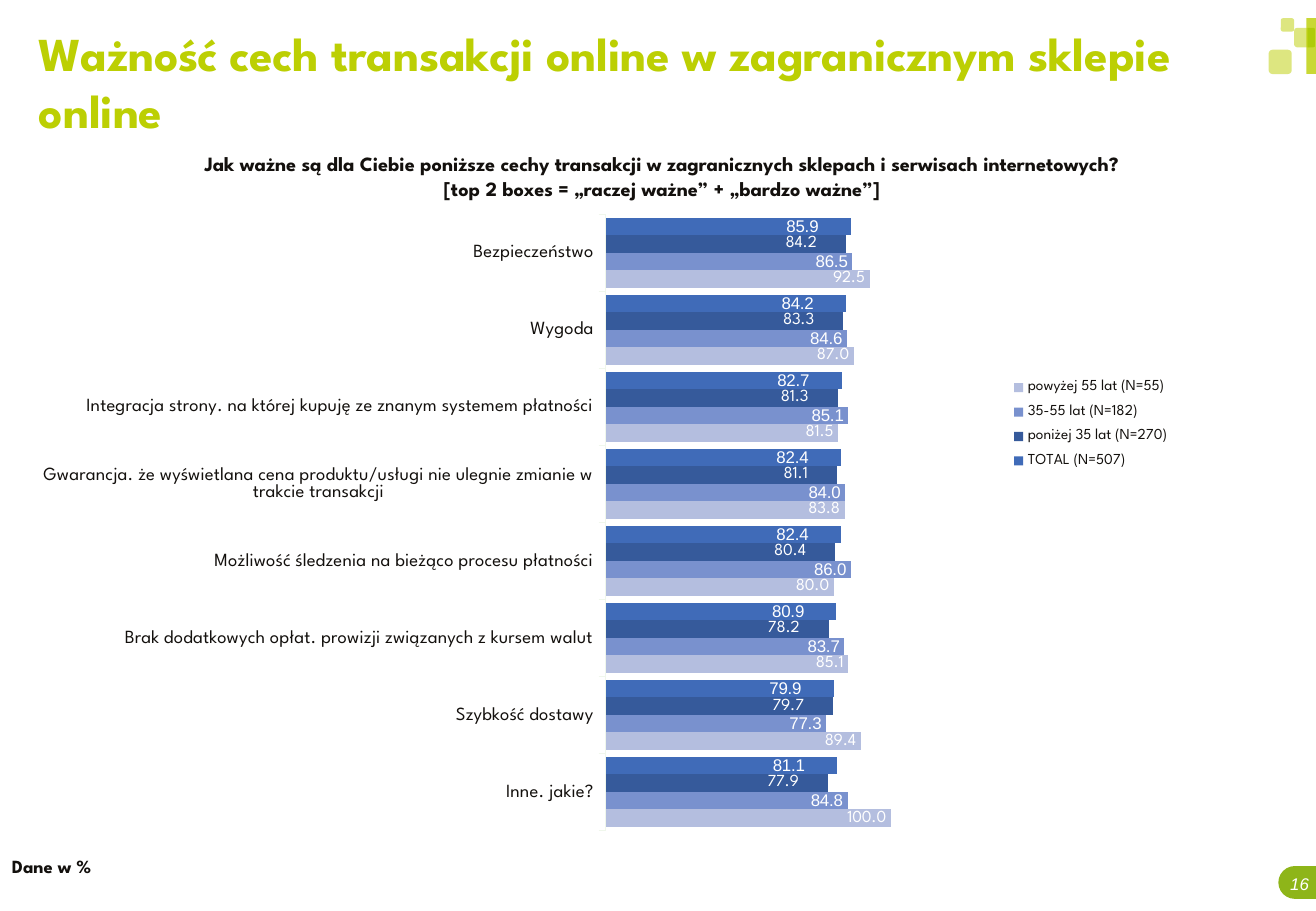
from lxml import etree
from pptx import Presentation
from pptx.chart.data import CategoryChartData
from pptx.dml.color import RGBColor
from pptx.enum.chart import XL_CHART_TYPE, XL_LABEL_POSITION, XL_LEGEND_POSITION, XL_TICK_MARK
from pptx.enum.shapes import MSO_SHAPE
from pptx.enum.text import MSO_ANCHOR, PP_ALIGN
from pptx.oxml import parse_xml
from pptx.oxml.ns import nsdecls, qn
from pptx.util import Pt

PX = 9144  # 100 px to the inch
WHITE = RGBColor(0xFF, 0xFF, 0xFF)
INK = RGBColor(0x13, 0x10, 0x0D)
LIME = RGBColor(0xBC, 0xCF, 0x03)
GREEN = RGBColor(0x7C, 0xBB, 0x26)
BADGE_GREEN = RGBColor(0x8E, 0xB5, 0x19)
AXIS_LINE = RGBColor(0xF0, 0xF7, 0xEC)
SPARTAN, ARIAL = "League Spartan", "Arial"

ACCOUNTING = r"_-* #\ ##0.0\ _z_ł_-;\-* #\ ##0.0\ _z_ł_"
FEATURES = [
    "Bezpieczeństwo",
    "Wygoda",
    "Integracja strony. na której kupuję ze znanym systemem płatności",
    "Gwarancja. że wyświetlana cena produktu/usługi nie ulegnie zmianie w trakcie transakcji",
    "Możliwość śledzenia na bieżąco procesu płatności",
    "Brak dodatkowych opłat. prowizji związanych z kursem walut",
    "Szybkość dostawy",
    "Inne. jakie?",
]
# name, values, bar colour, label font, label number format
AGE_GROUPS = [
    ("TOTAL (N=507)", (85.9, 84.2, 82.7, 82.4, 82.4, 80.9, 79.9, 81.1),
     RGBColor(0x40, 0x6B, 0xB8), ARIAL, ACCOUNTING),
    ("poniżej 35 lat (N=270)", (84.2, 83.3, 81.3, 81.1, 80.4, 78.2, 79.7, 77.9),
     RGBColor(0x36, 0x5A, 0x9B), SPARTAN, ACCOUNTING),
    ("35-55 lat (N=182)", (86.5, 84.6, 85.1, 84.0, 86.0, 83.7, 77.3, 84.8),
     RGBColor(0x79, 0x91, 0xCE), ARIAL, "0.0"),
    ("powyżej 55 lat (N=55)", (92.5, 87.0, 81.5, 83.8, 80.0, 85.1, 89.4, 100.0),
     RGBColor(0xB4, 0xBE, 0xDF), SPARTAN, "0.0"),
]


def scaled(box):
    return [length * PX for length in box]


def set_font(font, name, size, color, bold=False, italic=False):
    font.name, font.size = name, Pt(size)
    font.bold, font.italic = bold, italic
    font.color.rgb = color


def add_text(slide, box, lines, name, size, color, align=PP_ALIGN.LEFT,
             insets=(10, 5), wrap=True, bold=True, italic=False):
    frame = slide.shapes.add_textbox(*scaled(box)).text_frame
    frame.word_wrap = wrap
    frame.vertical_anchor = MSO_ANCHOR.TOP
    frame.margin_left = frame.margin_right = insets[0] * PX
    frame.margin_top = frame.margin_bottom = insets[1] * PX
    for index, line in enumerate(lines):
        paragraph = frame.add_paragraph() if index else frame.paragraphs[0]
        paragraph.alignment = align
        run = paragraph.add_run()
        run.text = line
        set_font(run.font, name, size, color, bold, italic)


def add_block(slide, kind, box, color, opacity=100, rotation=0):
    shape = slide.shapes.add_shape(kind, *scaled(box))
    shape.shadow.inherit = False
    shape.fill.solid()
    shape.fill.fore_color.rgb = color
    shape.line.fill.background()
    shape.rotation = rotation
    if opacity < 100:
        tint = shape.fill._xPr.find(".//" + qn("a:srgbClr"))
        etree.SubElement(tint, qn("a:alpha")).set("val", str(opacity * 1000))
    return shape


def add_corner_blocks(slide, box):
    left, top, width, height = box
    for x, y, w, h in ((0, 26, 19, 20), (21, 8, 15, 16), (10, 0, 11, 11)):
        add_block(slide, MSO_SHAPE.ROUNDED_RECTANGLE, (left + x, top + y, w, h), LIME, 50)
    add_block(slide, MSO_SHAPE.ROUND_2_SAME_RECTANGLE, (left + 27, top + 13, 16, 6),
              GREEN, rotation=90)
    add_block(slide, MSO_SHAPE.RECTANGLE, (left + width - 8, top, 8, height), LIME, 80)


def add_page_badge(slide, box):
    left, top, width, height = box
    tab = add_block(slide, MSO_SHAPE.ROUND_2_SAME_RECTANGLE, box, BADGE_GREEN, rotation=270)
    tab.adjustments[0], tab.adjustments[1] = 0.5, 0
    add_text(slide, (left + 7, top + 8, 17, 17), ["16"], ARIAL, 10, WHITE,
             PP_ALIGN.CENTER, (0, 0), wrap=False, bold=False, italic=True)


def manual_layout(x, y, width, height, inner=False):
    target = '<c:layoutTarget val="inner"/>' if inner else ""
    return parse_xml(
        f'<c:layout {nsdecls("c")}><c:manualLayout>{target}'
        '<c:xMode val="edge"/><c:yMode val="edge"/>'
        f'<c:x val="{x}"/><c:y val="{y}"/><c:w val="{width}"/><c:h val="{height}"/>'
        '</c:manualLayout></c:layout>')


def place_chart_parts(chart):
    """Fix the plot area and the legend inside the chart frame."""
    plot_area = chart._chartSpace.chart.plotArea
    legend = chart.legend._element
    for parent in (plot_area, legend):
        for layout in parent.findall(qn("c:layout")):
            parent.remove(layout)
    plot_area.insert(0, manual_layout(0.5, 0, 0.3, 0.91, inner=True))
    legend.find(qn("c:legendPos")).addnext(manual_layout(0.85, 0.23, 0.15, 0.16))


def add_importance_chart(slide, box):
    data = CategoryChartData(number_format="0.0")
    data.categories = FEATURES
    for name, values, *_ in AGE_GROUPS:
        data.add_series(name, values)
    chart = slide.shapes.add_chart(XL_CHART_TYPE.BAR_CLUSTERED, *scaled(box), data).chart
    chart.has_title = False
    set_font(chart.font, ARIAL, 10, INK)

    features = chart.category_axis
    features.reverse_order = True
    features.major_tick_mark = XL_TICK_MARK.OUTSIDE
    features.format.line.color.rgb = AXIS_LINE
    features.format.line.width = Pt(0.75)
    set_font(features.tick_labels.font, SPARTAN, 11, INK)
    percent = chart.value_axis
    percent.minimum_scale, percent.maximum_scale = 0, 120
    percent.has_major_gridlines = False
    percent.visible = False

    plot = chart.plots[0]
    plot.gap_width, plot.overlap = 40, 0
    plot.vary_by_categories = False
    for series, (_, _, color, font_name, number_format) in zip(plot.series, AGE_GROUPS):
        series.format.fill.solid()
        series.format.fill.fore_color.rgb = color
        series.invert_if_negative = False
        labels = series.data_labels
        labels.show_value = True
        labels.position = XL_LABEL_POSITION.INSIDE_END
        labels.number_format = number_format
        labels.number_format_is_linked = False
        set_font(labels.font, font_name, 10, WHITE)

    chart.has_legend = True
    chart.legend.position = XL_LEGEND_POSITION.RIGHT
    chart.legend.include_in_layout = False
    set_font(chart.legend.font, SPARTAN, 9, INK)
    place_chart_parts(chart)


def main():
    presentation = Presentation()
    presentation.slide_width, presentation.slide_height = scaled((1083, 750))
    slide = presentation.slides.add_slide(presentation.slide_layouts[6])
    add_page_badge(slide, (1054, 711, 27, 31))
    add_corner_blocks(slide, (1044, 15, 39, 46))
    add_text(slide, (32, 15, 1025, 85),
             ["Ważność cech transakcji online w zagranicznym sklepie online"],
             SPARTAN, 28, LIME, insets=(0, 5))
    add_text(slide, (71, 120, 948, 50),
             ["Jak ważne są dla Ciebie poniższe cechy transakcji w zagranicznych "
              "sklepach i serwisach internetowych?",
              "[top 2 boxes = „raczej ważne” + „bardzo ważne”]"],
             SPARTAN, 12, INK, PP_ALIGN.CENTER)
    add_importance_chart(slide, (29, 176, 939, 558))
    add_text(slide, (0, 699, 764, 29), ["Dane w %"], SPARTAN, 11, INK)
    presentation.save("out.pptx")


if __name__ == "__main__":
    main()
